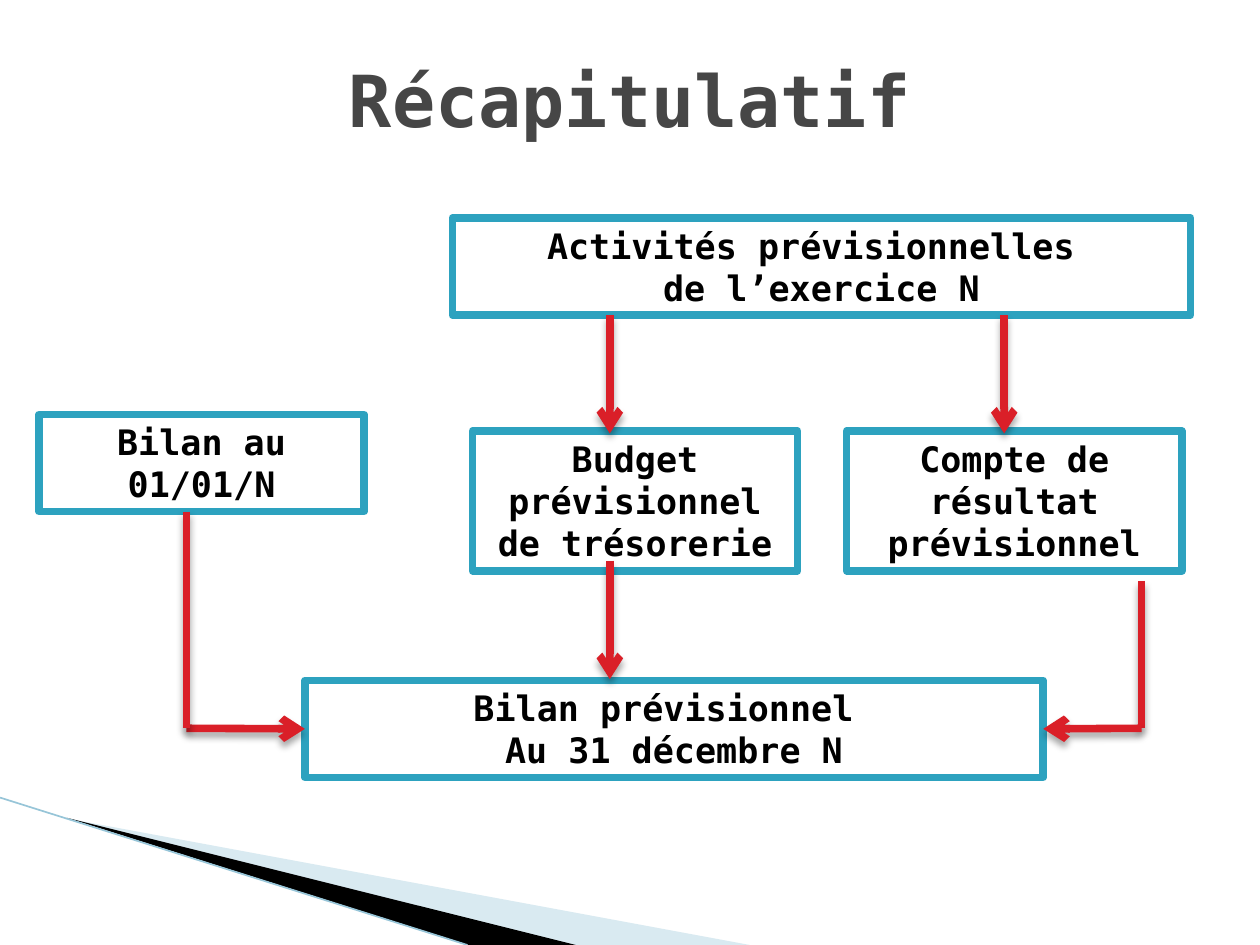
"""Build the Récapitulatif slide: forecast flow leading to the closing balance sheet."""
import pptx
import pptx.dml.color
import pptx.enum.shapes
import pptx.enum.text
import pptx.oxml
import pptx.oxml.ns
import pptx.util
from dataclasses import dataclass
from pptx.util import Inches


@dataclass(frozen=True)
class Theme:
    font: str = "DejaVu Sans Mono"
    title_size: int = 41
    box_size: int = 20
    title: str = "464646"
    text: str = "000000"
    box_fill: str = "FFFFFF"
    box_line: str = "2DA2BF"
    arrow: str = "DA1F28"
    wedge: str = "A0CBDC"
    wedge_dark: str = "000000"
    edge: str = "97C5D8"
    line_width: float = 4.33


theme = Theme()
rgb = pptx.dml.color.RGBColor.from_string
NS = pptx.oxml.ns.nsdecls("a")
EMPTY_EFFECT = f"<a:effectLst {NS}/>"
ARROW_SHADOW = (
    f'<a:effectLst {NS}><a:outerShdw blurRad="50800" dist="38100" dir="5400000" rotWithShape="0">'
    '<a:srgbClr val="000000"><a:alpha val="35000"/></a:srgbClr></a:outerShdw></a:effectLst>'
)


def write(tf, text, size, color, anchor):
    tf.word_wrap = True
    tf.vertical_anchor = anchor
    for i, line in enumerate(text.split("\n")):
        p = tf.add_paragraph() if i else tf.paragraphs[0]
        p.alignment = pptx.enum.text.PP_ALIGN.CENTER
        r = p.add_run()
        r.text = line
        r.font.name = theme.font
        r.font.size = pptx.util.Pt(size)
        r.font.bold = True
        r.font.color.rgb = rgb(color)


def add_line(s, start, end, color, width, effect, arrow=False):
    cx = s.shapes.add_connector(
        pptx.enum.shapes.MSO_CONNECTOR.STRAIGHT, *(Inches(v) for v in start + end))
    cx.line.color.rgb = rgb(color)
    cx.line.width = pptx.util.Pt(width)
    if arrow:
        cx.line._get_or_add_ln().append(pptx.oxml.parse_xml(f'<a:tailEnd {NS} type="arrow"/>'))
    cx._element.spPr.append(pptx.oxml.parse_xml(effect))
    return cx


prs = pptx.Presentation()
prs.slide_width, prs.slide_height = Inches(10), Inches(7.5)
s = prs.slides.add_slide(prs.slide_layouts[5])

wedges = [
    ([(0.55, 6.5), (5.95, 7.5), (4.56, 7.5)], theme.wedge, 40),
    ([(0.53, 6.49), (4.57, 7.5), (3.72, 7.5)], theme.wedge_dark, 100),
]
for points, color, opacity in wedges:
    corners = [(Inches(x), Inches(y)) for x, y in points]
    fb = s.shapes.build_freeform(*corners[0])
    fb.add_line_segments(corners[1:], close=True)
    sp = fb.convert_to_shape()
    sp.shadow.inherit = False
    sp.fill.solid()
    sp.fill.fore_color.rgb = rgb(color)
    sp.line.fill.background()
    if opacity < 100:
        clr = sp._element.spPr.find(".//" + pptx.oxml.ns.qn("a:srgbClr"))
        clr.append(pptx.oxml.parse_xml(f'<a:alpha {NS} val="{opacity * 1000}"/>'))
add_line(s, (0, 6.33), (3.71, 7.5), theme.edge, 0.95, EMPTY_EFFECT)

title = s.shapes.title
title.left, title.top, title.width, title.height = (Inches(v) for v in (0.5, 0.16, 9, 1.25))
write(title.text_frame, "Récapitulatif", size=theme.title_size, color=theme.title,
      anchor=pptx.enum.text.MSO_ANCHOR.MIDDLE)

boxes = [
    ("Activités prévisionnelles \nde l’exercice N", 3.59, 1.73, 5.86, 0.77),
    ("Bilan au\n01/01/N", 0.31, 3.29, 2.58, 0.77),
    ("Budget prévisionnel de trésorerie", 3.75, 3.42, 2.58, 1.11),
    ("Compte de résultat prévisionnel", 6.72, 3.42, 2.66, 1.11),
    ("Bilan prévisionnel \nAu 31 décembre N", 2.42, 5.4, 5.86, 0.77),
]
for text, *place in boxes:
    sp = s.shapes.add_shape(pptx.enum.shapes.MSO_SHAPE.RECTANGLE, *(Inches(v) for v in place))
    sp.shadow.inherit = False
    sp.fill.solid()
    sp.fill.fore_color.rgb = rgb(theme.box_fill)
    sp.line.color.rgb = rgb(theme.box_line)
    sp.line.width = pptx.util.Pt(theme.line_width)
    write(sp.text_frame, text, size=theme.box_size, color=theme.text,
          anchor=pptx.enum.text.MSO_ANCHOR.TOP)
    sp.text_frame.auto_size = pptx.enum.text.MSO_AUTO_SIZE.SHAPE_TO_FIT_TEXT
closing_balance = sp

arrows = [
    ((4.84, 2.5), (4.84, 3.44), True, None),
    ((7.97, 2.5), (7.97, 3.44), True, None),
    ((4.84, 4.45), (4.84, 5.39), True, None),
    ((1.48, 5.78), (2.42, 5.78), True, 1),
    ((1.48, 4.06), (1.48, 5.78), False, None),
    ((9.06, 4.61), (9.06, 5.78), False, None),
    ((9.06, 5.78), (8.28, 5.78), True, 3),
]
for start, end, head, side in arrows:
    cx = add_line(s, start, end, theme.arrow, theme.line_width, ARROW_SHADOW, arrow=head)
    if side is not None:
        cx.end_connect(closing_balance, side)

prs.save("out.pptx")
